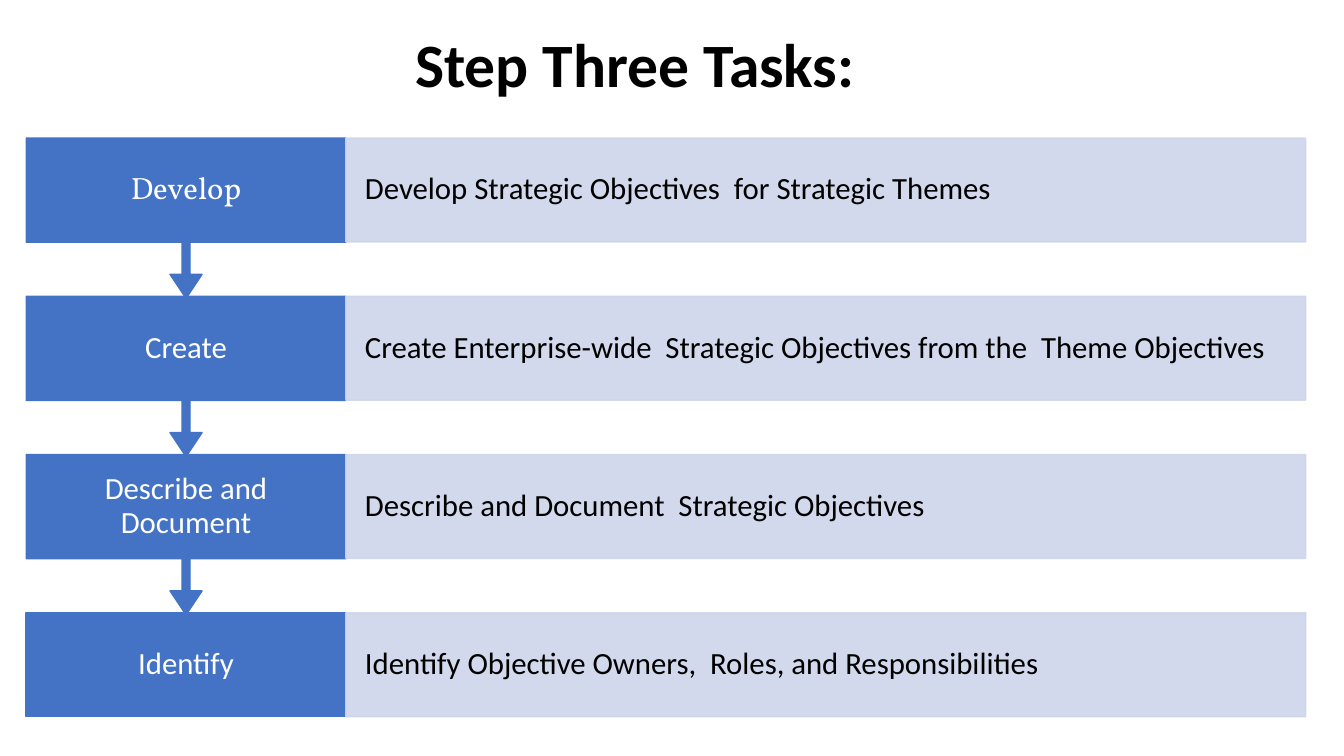
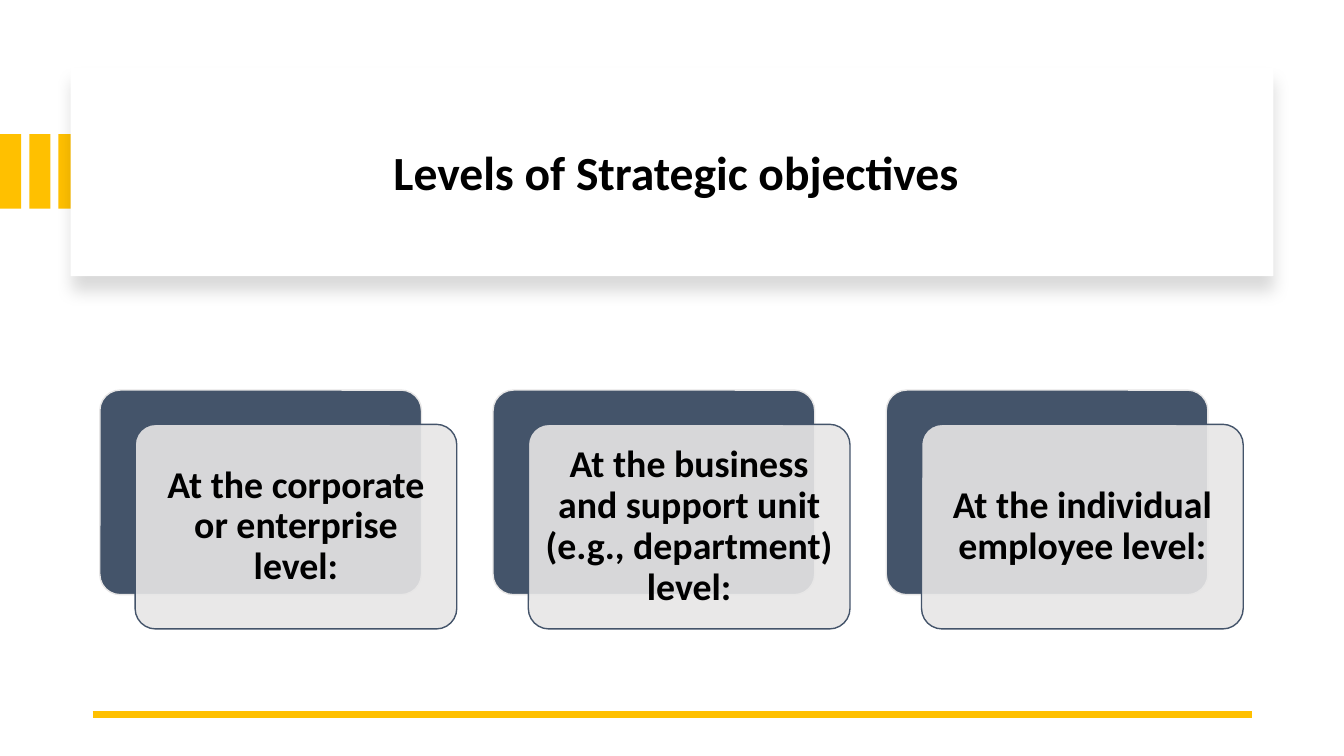
"""Build two slides about strategic objectives: a task flow and three levels."""
import lxml.etree
import pptx
import pptx.dml.color
import pptx.enum.shapes
import pptx.enum.text
import pptx.oxml
import pptx.oxml.ns
import pptx.util

Inches = pptx.util.Inches
Pt = pptx.util.Pt
SHAPES = pptx.enum.shapes.MSO_SHAPE
ALIGN = pptx.enum.text.PP_ALIGN

FONT = "Calibri"
BLACK, WHITE = "000000", "FFFFFF"
BLUE, PALE_BLUE = "4472C4", "CFD5EA"
SLATE, GREY, GOLD = "44546A", "E7E6E6", "FFC000"

TASKS = [
    ("Develop", "Develop Strategic Objectives  for Strategic Themes", "Vollkorn"),
    ("Create", "Create Enterprise-wide  Strategic Objectives from the  Theme Objectives", FONT),
    ("Describe and Document", "Describe and Document  Strategic Objectives", FONT),
    ("Identify", "Identify Objective Owners,  Roles, and Responsibilities", FONT),
]
LEVELS = [
    "At the corporate or enterprise level:",
    "At the business and support unit (e.g., department) level:",
    "At the individual employee level:",
]


def color(hex_text):
    """Return the RGB colour for a hex string."""
    return pptx.dml.color.RGBColor.from_string(hex_text)


def write(shape, text, size, fill=BLACK, font=FONT, bold=False, align=ALIGN.CENTER,
          margins=(0.1, 0.05)):
    """Write one formatted, vertically centred paragraph into a shape."""
    frame = shape.text_frame
    frame.word_wrap = True
    frame.auto_size = pptx.enum.text.MSO_AUTO_SIZE.NONE
    frame.vertical_anchor = pptx.enum.text.MSO_ANCHOR.MIDDLE
    frame.margin_left = frame.margin_right = Inches(margins[0])
    frame.margin_top = frame.margin_bottom = Inches(margins[1])
    paragraph = frame.paragraphs[0]
    paragraph.alignment = align
    paragraph.line_spacing = 0.9
    run = paragraph.add_run()
    run.text = text
    run.font.name = font
    run.font.size = Pt(size)
    run.font.bold = bold
    run.font.color.rgb = color(fill)


def add_shape(slide, kind, box, fill, line=None, adjustments=(), opacity=None):
    """Add a filled preset shape; opacity applies wherever the fill colour is used."""
    shape = slide.shapes.add_shape(kind, *map(Inches, box))
    shape.shadow.inherit = False
    shape.fill.solid()
    shape.fill.fore_color.rgb = color(fill)
    if line:
        shape.line.color.rgb = color(line)
        shape.line.width = Pt(1)
    else:
        shape.line.fill.background()
    for index, value in enumerate(adjustments):
        shape.adjustments[index] = value
    if opacity:
        for node in shape.element.spPr.iter(pptx.oxml.ns.qn("a:srgbClr")):
            if node.get("val") == fill:
                alpha = lxml.etree.SubElement(node, pptx.oxml.ns.qn("a:alpha"))
                alpha.set("val", str(opacity * 1000))
    return shape


def add_soft_shadow(shape):
    """Give a shape a faint shadow that falls downwards."""
    effects = shape.element.spPr.find(pptx.oxml.ns.qn("a:effectLst"))
    effects.append(pptx.oxml.parse_xml(
        f'<a:outerShdw {pptx.oxml.ns.nsdecls("a")} blurRad="{Pt(11)}" dist="{Pt(10)}" '
        'dir="5400000" algn="t" rotWithShape="0">'
        f'<a:srgbClr val="{BLACK}"><a:alpha val="15000"/></a:srgbClr></a:outerShdw>'))


def add_rule(slide, left, right, top):
    """Add a thick gold horizontal line."""
    rule = slide.shapes.add_connector(
        pptx.enum.shapes.MSO_CONNECTOR.STRAIGHT,
        Inches(left), Inches(top), Inches(right), Inches(top))
    rule.line.color.rgb = color(GOLD)
    rule.line.width = Pt(4.5)
    lxml.etree.SubElement(rule._element.spPr, pptx.oxml.ns.qn("a:effectLst"))


def add_title(slide, text, box, size):
    """Place and fill the title placeholder in front of the other shapes."""
    title = slide.shapes.title
    title.left, title.top, title.width, title.height = map(Inches, box)
    write(title, text, size, bold=True)
    slide.shapes.element.append(title.element)


def add_task(slide, top, label, description, font, has_arrow):
    """Add a task label, with an arrow to the next task, and its description."""
    left, width, height = 0.26, 3.17, 1.03
    if has_arrow:
        callout = add_shape(slide, SHAPES.UP_ARROW_CALLOUT, (left, top, width, 1.59),
                            BLUE, BLUE, (0.05, 0.1, 0.15, 0.65))
        callout.rotation = 180
    else:
        add_shape(slide, SHAPES.RECTANGLE, (left, top, width, height), BLUE, BLUE)
    label_box = slide.shapes.add_textbox(*map(Inches, (left, top, width, height)))
    write(label_box, label, 22, fill=WHITE, font=font, margins=(0.23, 0.17))
    panel = add_shape(slide, SHAPES.RECTANGLE, (left + width, top, 9.52, height),
                      PALE_BLUE, PALE_BLUE, opacity=90)
    write(panel, description, 22, align=ALIGN.LEFT, margins=(0.19, 0.31))


def add_level(slide, left, text):
    """Add a card in front of an offset dark card."""
    top, width, height = 3.87, 3.19, 2.03
    add_shape(slide, SHAPES.ROUNDED_RECTANGLE, (left, top, width, height),
              SLATE, GREY, (0.1,))
    card = add_shape(slide, SHAPES.ROUNDED_RECTANGLE,
                     (left + 0.35, top + 0.34, width, height), GREY, SLATE, (0.1,), 90)
    write(card, text, 27, bold=True, margins=(0.11, 0.11))


def build_tasks(slide):
    """Build the flow of tasks, from the last up so that arrow tips stay in front."""
    add_title(slide, "Step Three Tasks:", (0.55, 0.22, 11.5, 0.9), 44)
    last = len(TASKS) - 1
    for row in range(last, -1, -1):
        add_task(slide, 1.37 + row * 1.57, *TASKS[row], has_arrow=row < last)


def build_levels(slide):
    """Build the title banner and the three level cards."""
    for column in range(3):
        add_shape(slide, SHAPES.RECTANGLE, (column * 0.29, 1.33, 0.21, 0.74), GOLD)
    banner = add_shape(slide, SHAPES.RECTANGLE, (0.7, 0.67, 11.93, 2.07), WHITE)
    add_soft_shadow(banner)
    add_title(slide, "Levels of Strategic objectives", (1.14, 0.89, 11.13, 1.7), 34)
    add_rule(slide, 0.92, 12.42, 7.09)
    for column, text in enumerate(LEVELS):
        add_level(slide, 0.99 + column * 3.9, text)


def main():
    """Create the presentation and save it."""
    presentation = pptx.Presentation()
    presentation.slide_width = Inches(13.33)
    presentation.slide_height = Inches(7.5)
    title_only = presentation.slide_layouts[5]
    for build in (build_tasks, build_levels):
        build(presentation.slides.add_slide(title_only))
    presentation.save("out.pptx")


if __name__ == "__main__":
    main()
